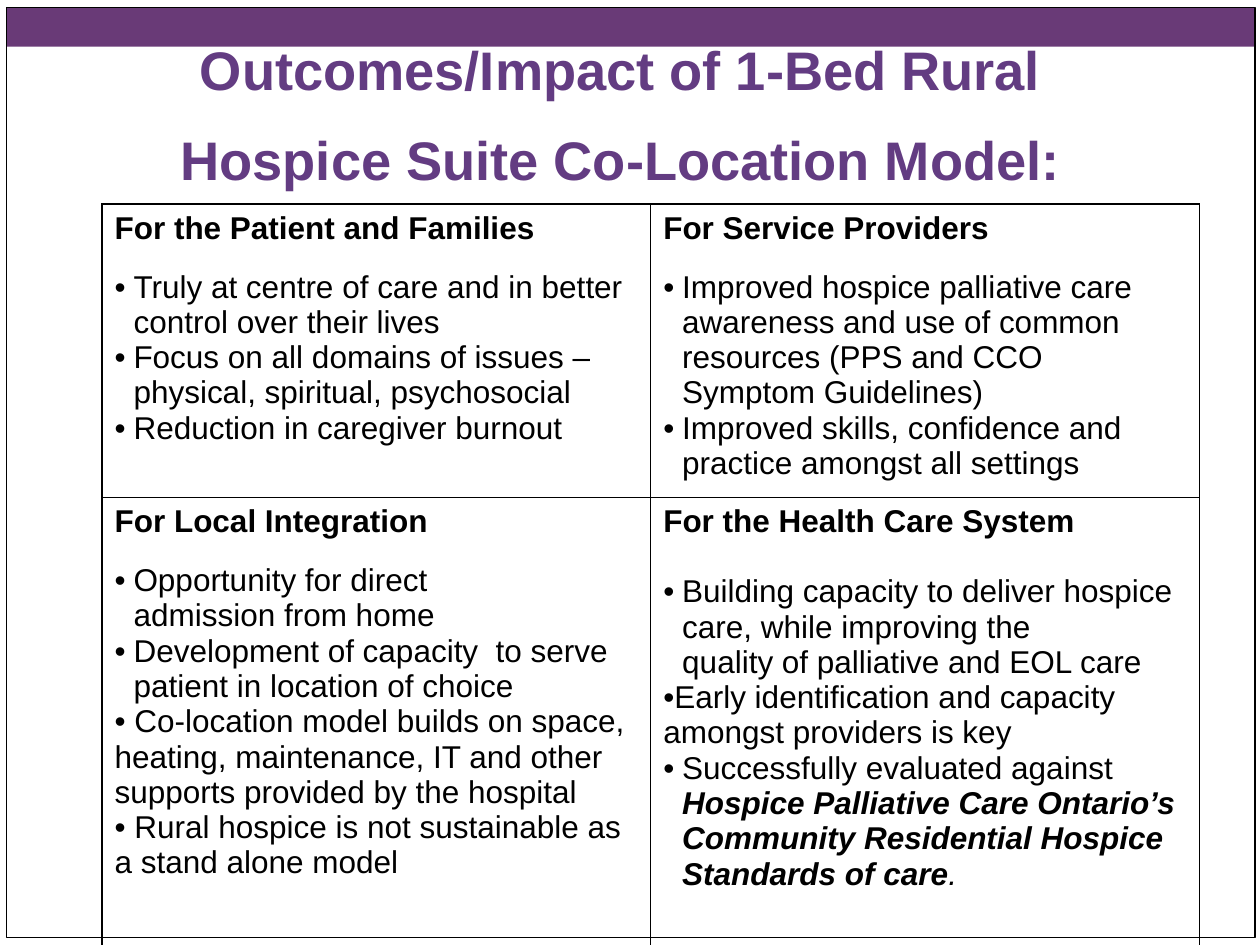
from lxml import etree
from pptx import Presentation
from pptx.dml.color import RGBColor
from pptx.enum.shapes import MSO_SHAPE
from pptx.enum.text import MSO_ANCHOR, MSO_AUTO_SIZE, PP_ALIGN
from pptx.oxml.ns import qn
from pptx.util import Inches, Pt

RECT = MSO_SHAPE.RECTANGLE
BOTTOM = MSO_ANCHOR.BOTTOM
CENTER = PP_ALIGN.CENTER
NO_AUTOFIT = MSO_AUTO_SIZE.NONE

BAR = RGBColor(0x69, 0x3A, 0x77)
PURPLE = RGBColor(0x63, 0x3C, 0x82)
BLACK = RGBColor(0, 0, 0)
FONT = "Arial"
HANG = 0.15
TITLE_ONLY = 5

TITLE = "Outcomes/Impact of 1-Bed Rural Hospice Suite Co-Location Model:"

# Each bullet is (hanging indent, lines); a line is a list of (text, format) runs.


def bullet(*lines, hang=HANG):
    return hang, [[(line, {})] if isinstance(line, str) else line for line in lines]


STRONG = {"bold": True, "italic": True}

QUADRANTS = [
    [
        ("For the Patient and Families", 13.6, [
            bullet("Truly at centre of care and in better", "control over their lives"),
            bullet("Focus on all domains of issues –", "physical, spiritual, psychosocial"),
            bullet("Reduction in caregiver burnout"),
        ]),
        ("For Service Providers", 13.6, [
            bullet("Improved hospice palliative care", "awareness and use of common",
                   "resources (PPS and CCO", "Symptom Guidelines)"),
            bullet("Improved skills, confidence and", "practice amongst all settings"),
        ]),
    ],
    [
        ("For Local Integration", 13.6, [
            bullet("Opportunity for direct", "admission from home"),
            bullet("Development of capacity  to serve", "patient in location of choice"),
            bullet(" Co-location model builds on space, heating, maintenance, IT and other "
                   "supports provided by the hospital", hang=0),
            bullet(" Rural hospice is not sustainable as a stand alone model", hang=0),
        ]),
        ("For the Health Care System", 20, [
            bullet("Building capacity to deliver hospice", "care, while improving the",
                   "quality of palliative and EOL care"),
            bullet("Early identification and capacity amongst providers is key", hang=0),
            bullet("Successfully evaluated against",
                   [("Hospice Palliative Care Ontario’s", STRONG)],
                   [("Community Residential Hospice", STRONG)],
                   [("Standards of care", STRONG), (".", {"italic": True})]),
        ]),
    ],
]


def add_text(p, text, size=18, color=BLACK, bold=False, italic=False):
    r = p.add_run()
    r.text = text
    r.font.name = FONT
    r.font.size = Pt(size)
    r.font.color.rgb = color
    r.font.bold = bold
    r.font.italic = italic


def set_bullet(p, hang):
    pPr = p._p.get_or_add_pPr()
    pPr.set("marL", str(Inches(hang)))
    pPr.set("indent", str(-Inches(hang)))
    etree.SubElement(pPr, qn("a:buFont"), typeface=FONT)
    etree.SubElement(pPr, qn("a:buChar"), char="•")


def set_borders(cell):
    tcPr = cell._tc.get_or_add_tcPr()
    for i, side in enumerate(("lnL", "lnR", "lnT", "lnB")):
        ln = etree.Element(qn(f"a:{side}"), w=str(Pt(1)))
        fill = etree.SubElement(ln, qn("a:solidFill"))
        etree.SubElement(fill, qn("a:srgbClr"), val=str(BLACK))
        tcPr.insert(i, ln)


def add_frame(s, left, top, width, height):
    bar = s.shapes.add_shape(RECT, left, top, width, Inches(0.31))
    bar.shadow.inherit = False
    bar.fill.solid()
    bar.fill.fore_color.rgb = BAR
    bar.line.fill.background()

    border = s.shapes.add_shape(RECT, left, top, width, height)
    border.shadow.inherit = False
    border.fill.background()
    border.line.color.rgb = BLACK
    border.line.width = Pt(0.75)


def add_title(s, left, top, width, height):
    sp = s.shapes.title
    sp.left, sp.top, sp.width, sp.height = left, top, width, height
    tf = sp.text_frame
    tf.word_wrap = True
    tf.auto_size = NO_AUTOFIT
    tf.vertical_anchor = BOTTOM
    p = tf.paragraphs[0]
    p.alignment = CENTER
    p.line_spacing = 1.38
    add_text(p, TITLE, size=31, color=PURPLE, bold=True)


def fill_quadrant(cell, heading, gap, bullets):
    cell.fill.background()
    set_borders(cell)
    tf = cell.text_frame
    p = tf.paragraphs[0]
    p.space_after = Pt(gap)
    add_text(p, heading, bold=True)
    for hang, lines in bullets:
        p = tf.add_paragraph()
        set_bullet(p, hang)
        for i, line in enumerate(lines):
            if i:
                p.add_line_break()
            for text, style in line:
                add_text(p, text, **style)


def add_outcomes(s, left, top, width, height):
    table = s.shapes.add_table(2, 2, left, top, width, height).table
    table.first_row = False
    table.horz_banding = False
    for column in table.columns:
        column.width = width // 2
    table.rows[0].height = Inches(2.33)
    table.rows[1].height = height - Inches(2.33)
    for i, row in enumerate(QUADRANTS):
        for j, quadrant in enumerate(row):
            fill_quadrant(table.cell(i, j), *quadrant)


def main():
    prs = Presentation()
    prs.slide_width, prs.slide_height = Inches(10), Inches(7.5)
    s = prs.slides.add_slide(prs.slide_layouts[TITLE_ONLY])
    add_frame(s, Inches(0.05), Inches(0.06), Inches(9.91), Inches(7.38))
    add_title(s, Inches(0.67), Inches(0.57), Inches(8.5), Inches(1))
    add_outcomes(s, Inches(0.81), Inches(1.62), Inches(8.71), Inches(6.3))
    prs.save("out.pptx")


if __name__ == "__main__":
    main()
